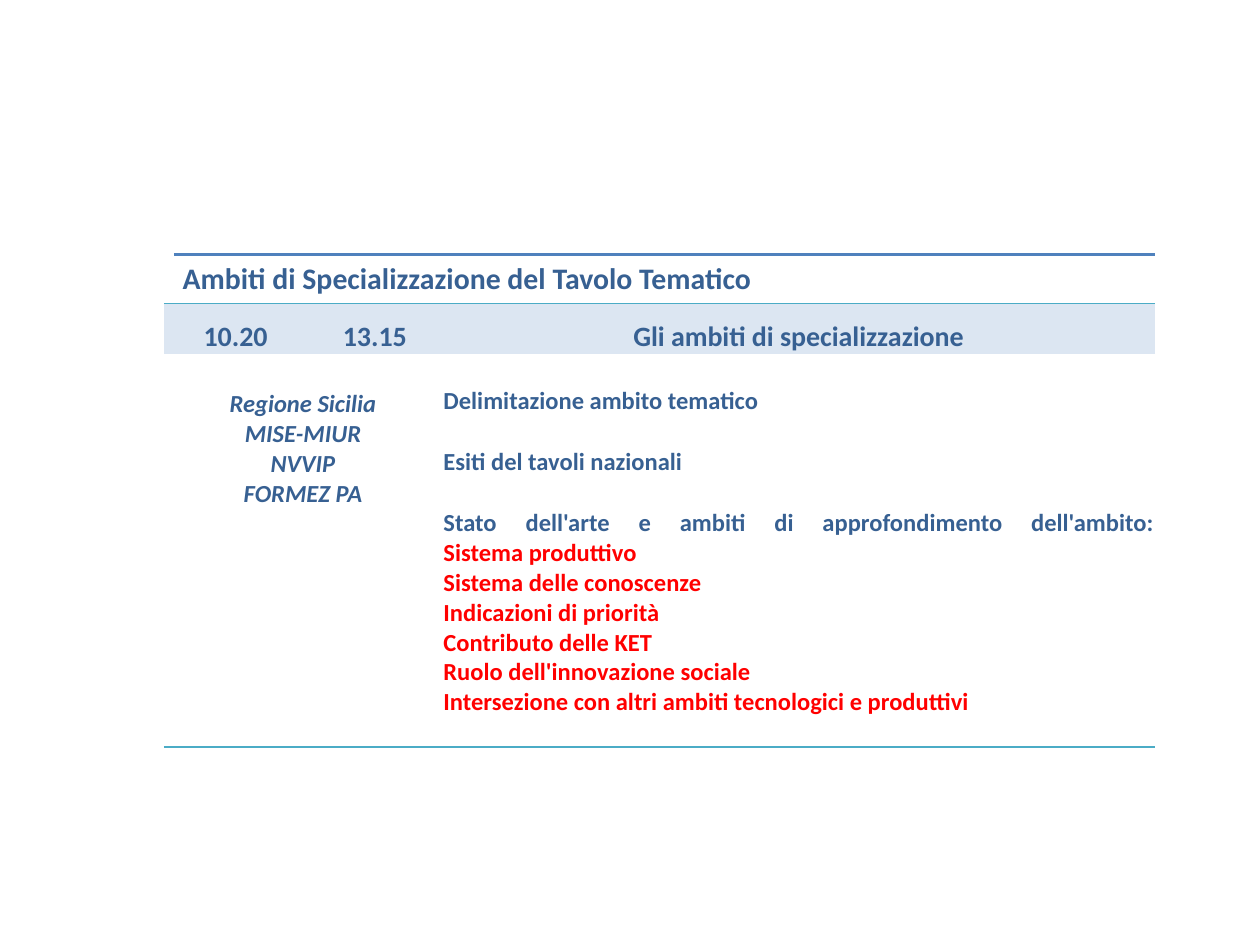
import copy

import pptx
import pptx.dml.color
import pptx.enum.shapes
import pptx.enum.text
import pptx.oxml
import pptx.oxml.ns
import pptx.util

COLORS = {"text": "376092", "accent": "FF0000", "band": "DCE6F2",
          "rule": "4F81BD", "border": "4BACC6"}
Inches = pptx.util.Inches
ALIGN = pptx.enum.text.PP_ALIGN
ANCHOR = pptx.enum.text.MSO_ANCHOR
PLAIN_STYLE = "{2D5ABB26-0587-4C30-8999-92F81FD0307C}"

AGENDA_LEFT, AGENDA_TOP = 1.3, 2.41
COLUMNS = [1.14, 1.07, 5.66]
ROWS = [0.4, 0.73, 0.25, 2.14]
RIGHT = AGENDA_LEFT + sum(COLUMNS)
HEADING_LEFT, HEADING_TOP, HEADING_HEIGHT = 1.38, 2.02, 0.4

SCHEDULE = ["10.20", "13.15", "Gli ambiti di specializzazione"]
BODIES = ["Regione Sicilia", "MISE-MIUR", "NVVIP", "FORMEZ PA"]
STATE = "Stato dell'arte e ambiti di approfondimento dell'ambito:"
TOPICS = ["Sistema produttivo", "Sistema delle conoscenze",
          "Indicazioni di priorità", "Contributo delle KET",
          "Ruolo dell'innovazione sociale",
          "Intersezione con altri ambiti tecnologici e produttivi"]


def rgb(name):
    return pptx.dml.color.RGBColor.from_string(COLORS[name])


def set_all(target, values):
    for key, value in values.items():
        setattr(target, key, value)


def add_words(paragraph, words, size, color="text", italic=False):
    run = paragraph.add_run()
    run.text = words
    set_all(run.font, {"name": "Calibri", "size": pptx.util.Pt(size),
                       "bold": True, "italic": italic})
    run.font.color.rgb = rgb(color)
    return run


def break_line(paragraph, run):
    paragraph.add_line_break()
    paragraph._p[-1].append(copy.deepcopy(run._r.rPr))


def fill_cell(cell, lines, align, anchor, size=14, color="text", italic=False):
    set_all(cell, {"margin_left": Inches(0.01), "margin_right": Inches(0.01),
                   "margin_top": Inches(0.01), "margin_bottom": 0,
                   "vertical_anchor": anchor})
    frame = cell.text_frame
    for index, words in enumerate(lines):
        paragraph = frame.add_paragraph() if index else frame.paragraphs[0]
        paragraph.alignment = align
        if words == STATE:
            break_line(paragraph, add_words(paragraph, words, size))
            words = TOPICS[0]
        add_words(paragraph, words, size, color, italic)


def add_border(cell, side):
    cell._tc.get_or_add_tcPr().insert(0, pptx.oxml.parse_xml(
        f'<a:ln{side} {pptx.oxml.ns.nsdecls("a")} w="12700"><a:solidFill>'
        f'<a:srgbClr val="{COLORS["border"]}"/></a:solidFill></a:ln{side}>'))


def add_heading(slide):
    heading = slide.shapes.title
    set_all(heading, {"left": Inches(HEADING_LEFT), "top": Inches(HEADING_TOP),
                      "width": Inches(RIGHT - HEADING_LEFT),
                      "height": Inches(HEADING_HEIGHT)})
    margins = {f"margin_{side}": Inches(0.07)
               for side in ("left", "right", "top", "bottom")}
    set_all(heading.text_frame, {**margins, "word_wrap": True,
                                 "vertical_anchor": ANCHOR.TOP,
                                 "auto_size": pptx.enum.text.MSO_AUTO_SIZE.NONE})
    paragraph = heading.text_frame.paragraphs[0]
    set_all(paragraph, {"alignment": ALIGN.LEFT, "line_spacing": 0.9})
    add_words(paragraph, "Ambiti di Specializzazione del Tavolo Tematico", 17)


def add_rule(slide):
    rule = slide.shapes.add_connector(
        pptx.enum.shapes.MSO_CONNECTOR.STRAIGHT, Inches(HEADING_LEFT),
        Inches(HEADING_TOP), Inches(RIGHT), Inches(HEADING_TOP))
    rule.line.color.rgb = rgb("rule")
    rule.line.width = pptx.util.Pt(2)
    rule._element.spPr.append(pptx.oxml.parse_xml(
        f'<a:effectLst {pptx.oxml.ns.nsdecls("a")}/>'))


def add_agenda(slide):
    frame = slide.shapes.add_table(
        len(ROWS), len(COLUMNS), Inches(AGENDA_LEFT), Inches(AGENDA_TOP),
        Inches(sum(COLUMNS)), Inches(sum(ROWS)))
    agenda = frame.table
    agenda._tbl.tblPr.find(pptx.oxml.ns.qn("a:tableStyleId")).text = PLAIN_STYLE
    set_all(agenda, {"first_row": False, "horz_banding": False})
    for column, width in zip(agenda.columns, COLUMNS):
        column.width = Inches(width)
    for row, height in zip(agenda.rows, ROWS):
        row.height = Inches(height)
    for cell in agenda.iter_cells():
        cell.fill.background()

    for column, words in enumerate(SCHEDULE):
        cell = agenda.cell(0, column)
        fill_cell(cell, [words], ALIGN.CENTER, ANCHOR.BOTTOM, size=16)
        cell.fill.solid()
        cell.fill.fore_color.rgb = rgb("band")
        add_border(cell, "T")
        add_border(agenda.cell(len(ROWS) - 1, column), "B")

    bodies = agenda.cell(1, 0)
    bodies.merge(agenda.cell(len(ROWS) - 1, 1))
    fill_cell(bodies, BODIES, ALIGN.CENTER, ANCHOR.TOP, italic=True)
    bodies.margin_top = Inches(0.28)
    add_border(bodies, "B")

    sections = [(["Delimitazione ambito tematico"], "text"),
                (["Esiti del tavoli nazionali"], "text"),
                ([STATE] + TOPICS[1:], "accent")]
    for row, (lines, color) in enumerate(sections, start=1):
        fill_cell(agenda.cell(row, 2), lines, ALIGN.JUSTIFY, ANCHOR.MIDDLE,
                  color=color)


def main():
    deck = pptx.Presentation()
    set_all(deck, {"slide_width": Inches(10), "slide_height": Inches(7.5)})
    slide = deck.slides.add_slide(deck.slide_layouts[5])
    add_agenda(slide)
    add_rule(slide)
    add_heading(slide)
    deck.save("out.pptx")


if __name__ == "__main__":
    main()
